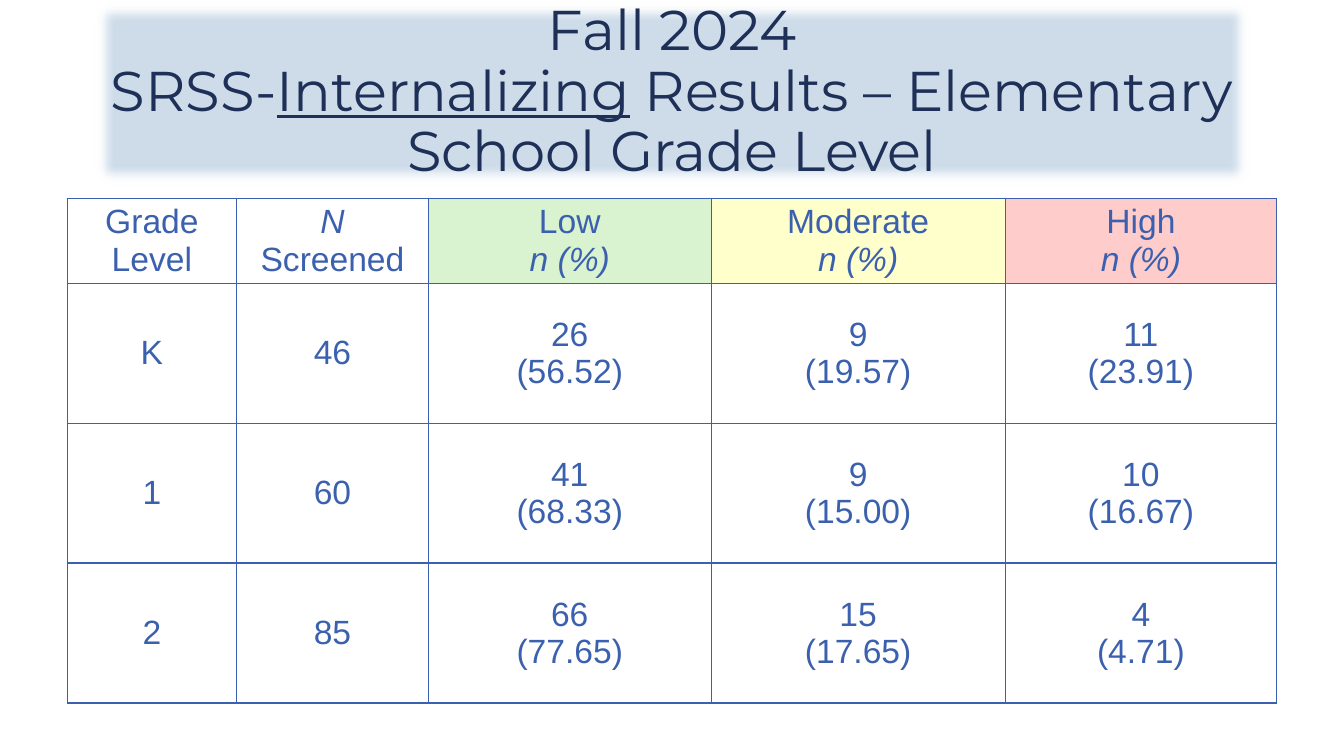
"""Build the Fall 2024 SRSS-Internalizing grade level results slide."""
from dataclasses import dataclass

from lxml import etree
from pptx import Presentation
from pptx import util as u
from pptx.dml.color import RGBColor
from pptx.enum import shapes, text
from pptx.oxml import ns

NAVY = RGBColor(0x1E, 0x30, 0x57)
BLUE = RGBColor(0x3B, 0x61, 0xAE)
PALE_BLUE = RGBColor(0xCE, 0xDC, 0xEA)
WHITE = RGBColor(0xFF, 0xFF, 0xFF)
GREEN = RGBColor(0xD9, 0xF2, 0xD0)
YELLOW = RGBColor(0xFF, 0xFF, 0xCC)
PINK = RGBColor(0xFF, 0xCC, 0xCC)

HEADER_HEIGHT = 60
GRADE_HEIGHT = 100
SOFT_EDGE = 9


@dataclass(frozen=True)
class Column:
    heading: str
    width: float
    fill: RGBColor = WHITE


@dataclass(frozen=True)
class Grade:
    level: str
    screened: int
    risk_counts: tuple[str, str, str]


COLUMNS = [
    Column("Grade Level", 121),
    Column("N\nScreened", 137),
    Column("Low\nn (%)", 202, GREEN),
    Column("Moderate\nn (%)", 210, YELLOW),
    Column("High\nn (%)", 194, PINK),
]
GRADES = [
    Grade("K", 46, ("26\n(56.52)", "9\n(19.57)", "11\n(23.91)")),
    Grade("1", 60, ("41\n(68.33)", "9\n(15.00)", "10\n(16.67)")),
    Grade("2", 85, ("66\n(77.65)", "15\n(17.65)", "4\n(4.71)")),
]


def add_title(slide) -> None:
    banner = slide.shapes.add_shape(
        shapes.MSO_SHAPE.RECTANGLE, u.Pt(66), u.Pt(0), u.Pt(828), u.Pt(133)
    )
    banner.shadow.inherit = False
    banner.fill.solid()
    banner.fill.fore_color.rgb = PALE_BLUE
    banner.line.fill.background()
    effects = banner.element.spPr.find(ns.qn("a:effectLst"))
    etree.SubElement(effects, ns.qn("a:softEdge"), rad=str(u.Pt(SOFT_EDGE)))

    frame = banner.text_frame
    frame.word_wrap = True
    frame.vertical_anchor = text.MSO_ANCHOR.MIDDLE
    frame.text = "Fall 2024\vSRSS-"
    heading = frame.paragraphs[0]
    heading.alignment = text.PP_ALIGN.CENTER
    heading.line_spacing = 0.9
    internalizing = heading.add_run()
    internalizing.text = "Internalizing"
    internalizing.font.underline = True
    heading.add_run().text = " Results – Elementary School Grade Level"
    for run in heading.runs:
        run.font.name = "Montserrat"
        run.font.size = u.Pt(40)
        run.font.color.rgb = NAVY


def add_borders(cell) -> None:
    properties = cell._tc.get_or_add_tcPr()
    for position, side in enumerate(("lnL", "lnR", "lnT", "lnB")):
        border = etree.Element(ns.qn(f"a:{side}"), w=str(u.Pt(1)))
        fill = etree.SubElement(border, ns.qn("a:solidFill"))
        etree.SubElement(fill, ns.qn("a:srgbClr"), val=str(BLUE))
        properties.insert(position, border)


def fill_cell(cell, content: str, fill: RGBColor, anchor: text.MSO_ANCHOR) -> None:
    cell.text_frame.text = content
    cell.vertical_anchor = anchor
    cell.fill.solid()
    cell.fill.fore_color.rgb = fill
    add_borders(cell)
    for paragraph in cell.text_frame.paragraphs:
        paragraph.alignment = text.PP_ALIGN.CENTER
        for run in paragraph.runs:
            run.font.name = "Arial"
            run.font.size = u.Pt(24)
            run.font.bold = False
            run.font.italic = run.text in ("N", "n (%)")
            run.font.color.rgb = BLUE


def add_results(slide) -> None:
    width = sum(column.width for column in COLUMNS)
    height = HEADER_HEIGHT + GRADE_HEIGHT * len(GRADES)
    results = slide.shapes.add_table(
        len(GRADES) + 1, len(COLUMNS), u.Pt(48), u.Pt(141.5), u.Pt(width), u.Pt(height)
    ).table
    results.horz_banding = False
    results.rows[0].height = u.Pt(HEADER_HEIGHT)
    for index, column in enumerate(COLUMNS):
        results.columns[index].width = u.Pt(column.width)
        fill_cell(results.cell(0, index), column.heading, column.fill, text.MSO_ANCHOR.TOP)
    for row, grade in enumerate(GRADES, start=1):
        results.rows[row].height = u.Pt(GRADE_HEIGHT)
        values = (grade.level, str(grade.screened), *grade.risk_counts)
        for index, value in enumerate(values):
            fill_cell(results.cell(row, index), value, WHITE, text.MSO_ANCHOR.MIDDLE)


def main() -> None:
    deck = Presentation()
    deck.slide_width, deck.slide_height = u.Pt(960), u.Pt(540)
    slide = deck.slides.add_slide(deck.slide_layouts[6])
    add_title(slide)
    add_results(slide)
    deck.save("out.pptx")


if __name__ == "__main__":
    main()
